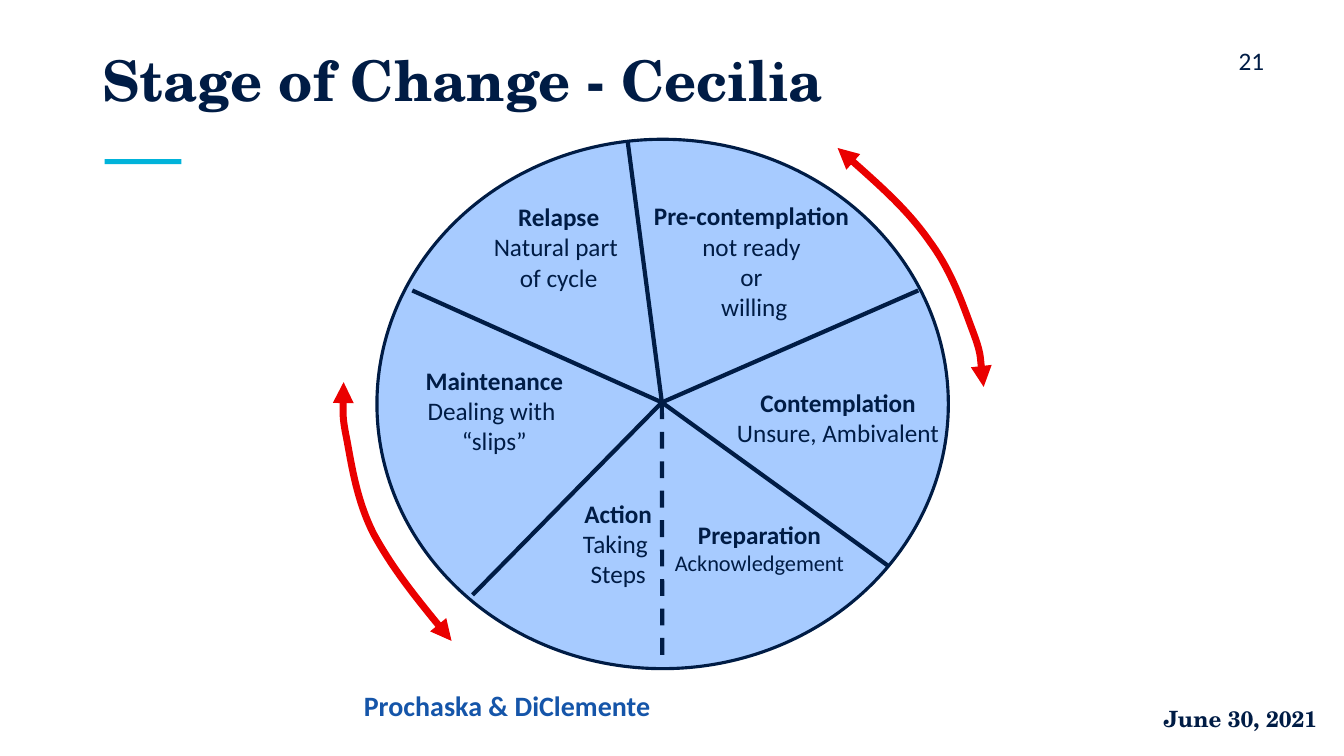
from lxml import etree
from pptx import Presentation
from pptx.dml.color import RGBColor
from pptx.enum.dml import MSO_LINE
from pptx.enum.shapes import MSO_CONNECTOR, MSO_SHAPE
from pptx.enum.text import MSO_ANCHOR, PP_ALIGN
from pptx.oxml.ns import qn
from pptx.util import Cm, Pt

NAVY = RGBColor(0x00, 0x1C, 0x45)
CYAN = RGBColor(0x00, 0xB3, 0xDA)
BLUE = RGBColor(0x15, 0x55, 0xA9)
SKY = RGBColor(0xA7, 0xCB, 0xFF)
RED = RGBColor(0xEA, 0x00, 0x00)
SANS, SERIF = "Calibri", "TeX Gyre Schola"
LEFT, CENTER, RIGHT = PP_ALIGN.LEFT, PP_ALIGN.CENTER, PP_ALIGN.RIGHT
TOP, MIDDLE = MSO_ANCHOR.TOP, MSO_ANCHOR.MIDDLE
RECT, OVAL = MSO_SHAPE.RECTANGLE, MSO_SHAPE.OVAL
STRAIGHT, DASH = MSO_CONNECTOR.STRAIGHT, MSO_LINE.DASH

HUB = (16.68, 10.14)
SPOKES = [
    ((10.39, 7.32), None),
    ((23.14, 7.32), None),
    ((15.82, 3.58), None),
    ((22.4, 14.27), None),
    ((16.69, 16.84), DASH),
    ((11.91, 14.99), None),
]
STAGES = [
    ((15.62, 4.93, 6.78, 3.33), 18,
     ["Pre-contemplation ", "not ready ", "or ", "willing"]),
    ((17.73, 9.63, 6.78, 1.83), 18, ["Contemplation", "Unsure, Ambivalent"]),
    ((15.75, 12.95, 6.78, 1.7), 16, ["Preparation", "Acknowledgement"]),
    ((12.8, 12.42, 5.56, 2.57), 18, ["Action", "Taking ", "Steps"]),
    ((9.07, 9.07, 6.78, 2.57), 18, ["Maintenance", "Dealing with ", "“slips”"]),
    ((10.69, 4.95, 6.78, 2.57), 18, ["Relapse", "Natural part ", "of cycle"]),
]
ARCS = [
    [(21.11, 3.73), (22, 4.52), (22.89, 5.31), (23.44, 6.1), (24, 6.86),
     (24.28, 7.72), (24.51, 8.33), (24.74, 8.94), (24.79, 9.75), (24.79, 9.75)],
    [(11.38, 16.15), (10.62, 15.24), (9.88, 14.3), (9.42, 13.46), (8.99, 12.62),
     (8.86, 11.71), (8.74, 11.07), (8.61, 10.44), (8.66, 9.63), (8.66, 9.63)],
]


class Deck:
    def __init__(self):
        self.prs = Presentation()
        self.prs.slide_width, self.prs.slide_height = Cm(33.87), Cm(19.05)
        self.slide = self.prs.slides.add_slide(self.prs.slide_layouts[6])
        self.shapes = self.slide.shapes

    def shape(self, kind, box, fill, edge=None):
        item = self.shapes.add_shape(kind, *map(Cm, box))
        item.shadow.inherit = False
        item.fill.solid()
        item.fill.fore_color.rgb = fill
        if edge:
            item.line.color.rgb = edge
            item.line.width = Pt(2.25)
        else:
            item.line.fill.background()

    def text(self, box, rows, align=CENTER, color=NAVY, face=SANS,
             anchor=TOP, space=None):
        frame = self.shapes.add_textbox(*map(Cm, box)).text_frame
        frame.word_wrap = True
        frame.vertical_anchor = anchor
        frame.text = "\n".join(row[0] for row in rows)
        for para, (_, size, bold) in zip(frame.paragraphs, rows):
            para.alignment = align
            para.line_spacing = space
            font = para.font
            font.name, font.size, font.bold = face, Pt(size), bold
            font.color.rgb = color

    def line(self, start, end, dash):
        item = self.shapes.add_connector(STRAIGHT, *map(Cm, start + end))
        item.line.color.rgb = NAVY
        item.line.width = Pt(3)
        if dash:
            item.line.dash_style = dash
        etree.SubElement(item._element.spPr, qn("a:effectLst"))

    def arc(self, points):
        start, *rest = [(Cm(x), Cm(y)) for x, y in points]
        pen = self.shapes.build_freeform(*start)
        pen.add_line_segments(rest, close=False)
        item = pen.convert_to_shape()
        item.shadow.inherit = False
        item.fill.background()
        item.line.color.rgb = RED
        item.line.width = Pt(5)
        route = item._element.find(".//" + qn("a:path"))
        steps = route.findall(qn("a:lnTo"))
        for i in range(0, len(steps), 3):
            curve = etree.SubElement(route, qn("a:cubicBezTo"))
            for step in steps[i:i + 3]:
                curve.append(step[0])
                route.remove(step)
        edge = item._element.spPr.find(qn("a:ln"))
        for end in ("a:headEnd", "a:tailEnd"):
            etree.SubElement(edge, qn(end), type="triangle")


def main():
    deck = Deck()
    deck.shape(RECT, (2.64, 4.01, 1.93, 0.13), CYAN)
    deck.text((2.34, 0.25, 29.21, 3.68), [("Stage of Change - Cecilia", 40, True)],
              LEFT, face=SERIF, anchor=MIDDLE, space=0.9)
    deck.text((7.7, 17.22, 10.16, 0.51), [("Prochaska & DiClemente", 20, True)],
              color=BLUE)
    deck.shape(OVAL, (9.5, 3.51, 14.4, 13.34), SKY, NAVY)
    for end, dash in SPOKES:
        deck.line(HUB, end, dash)
    for box, size, (name, *notes) in STAGES:
        deck.text(box, [(name, 18, True)] + [(note, size, False) for note in notes])
    for points in ARCS:
        deck.arc(points)
    deck.text((30.38, 1.02, 2.31, 1.02), [("21", 18, False)])
    deck.text((27.94, 17.65, 5.51, 1.02), [("June 30, 2021", 16, True)],
              RIGHT, face=SERIF)
    deck.prs.save("out.pptx")


if __name__ == "__main__":
    main()
